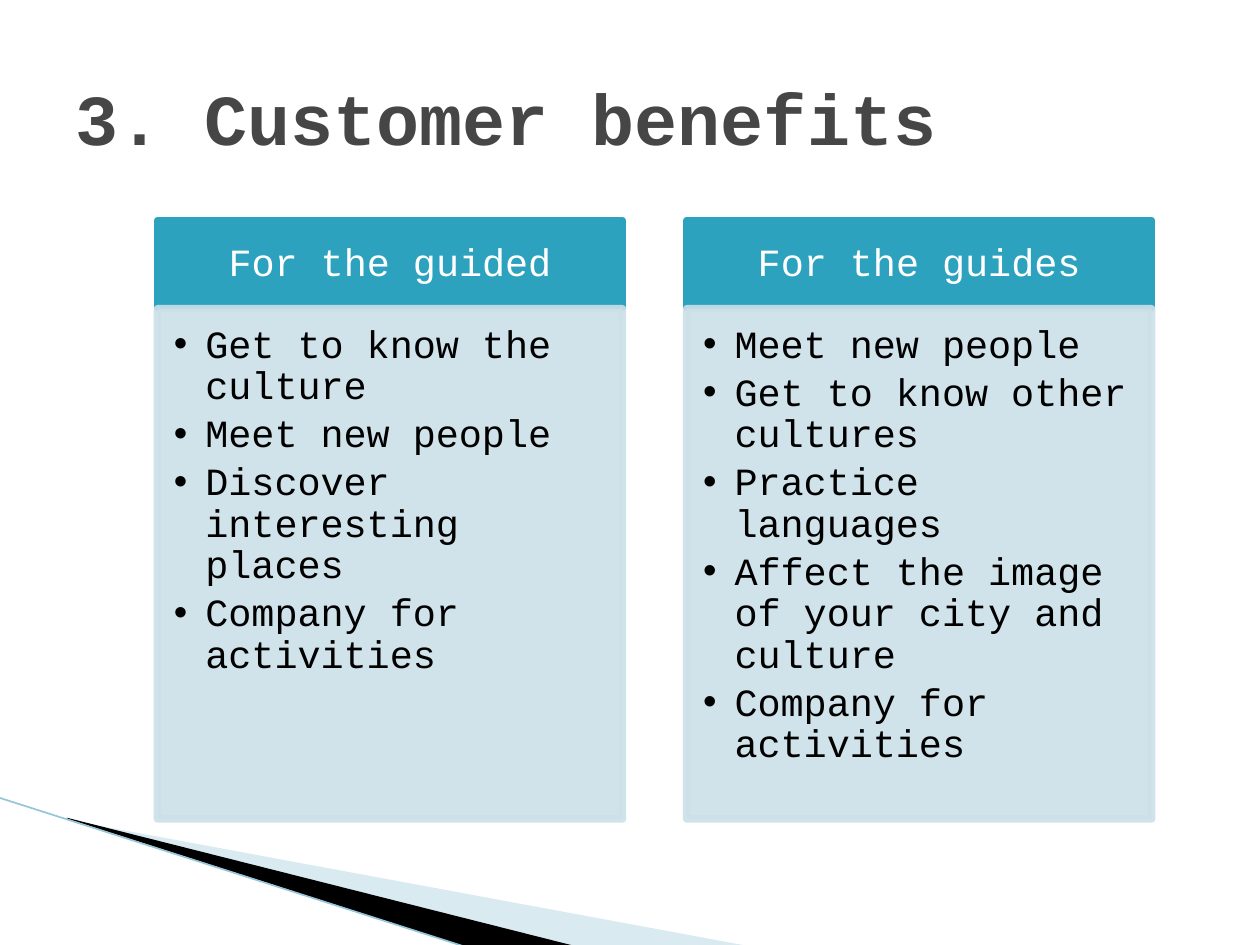
import pptx
import pptx.util
import pptx.dml.color
import pptx.enum.shapes
import pptx.enum.text
import pptx.oxml.ns
from lxml import etree

Inches = pptx.util.Inches
Pt = pptx.util.Pt
qn = pptx.oxml.ns.qn
ALIGN = pptx.enum.text.PP_ALIGN
ANCHOR = pptx.enum.text.MSO_ANCHOR

COLORS = {
    "title": "464646",
    "header": "2DA2BF",
    "panel": "CDE0E8",
    "wedge": "A0CBDC",
    "edge": "97C5D8",
    "black": "000000",
    "white": "FFFFFF",
}


def paint(shape, color, opacity=100, line_width=None):
    rgb = pptx.dml.color.RGBColor.from_string(COLORS[color])
    shape.shadow.inherit = False
    shape.fill.solid()
    shape.fill.fore_color.rgb = rgb
    if line_width is None:
        shape.line.fill.background()
    else:
        shape.line.color.rgb = rgb
        shape.line.width = Pt(line_width)
    if opacity < 100:
        for tone in shape._element.spPr.iter(qn("a:srgbClr")):
            etree.SubElement(tone, qn("a:alpha"), val=str(opacity * 1000))


def write(shape, lines, size, color, frame_format, para_format, bold=False, bullet=False):
    frame = shape.text_frame
    for name, value in frame_format.items():
        setattr(frame, name, value)
    for index, line in enumerate(lines):
        para = frame.add_paragraph() if index else frame.paragraphs[0]
        if bullet:
            props = para._p.get_or_add_pPr()
            props.set("marL", str(Inches(0.25)))
            props.set("indent", str(Inches(-0.25)))
            etree.SubElement(props, qn("a:buFont"), typeface="Arial")
            etree.SubElement(props, qn("a:buChar"), char="•")
        for name, value in para_format.items():
            setattr(para, name, value)
        span = para.add_run()
        span.text = line
        font_format = {"name": "Courier New", "size": Pt(size), "bold": bold}
        for name, value in font_format.items():
            setattr(span.font, name, value)
        span.font.color.rgb = pptx.dml.color.RGBColor.from_string(COLORS[color])


deck = pptx.Presentation()
deck.slide_width = Inches(10)
deck.slide_height = Inches(7.5)
page = deck.slides.add_slide(deck.slide_layouts[6])

wedges = [
    ("wedge", 40, [(0.55, 6.51), (5.95, 7.51), (4.56, 7.51), (0.55, 6.5)]),
    ("black", 100, [(0.53, 6.49), (4.57, 7.51), (3.72, 7.52), (0.54, 6.5)]),
]
for color, opacity, points in wedges:
    corners = [(Inches(x), Inches(y)) for x, y in points]
    builder = page.shapes.build_freeform(*corners[0])
    builder.add_line_segments(corners[1:], close=True)
    paint(builder.convert_to_shape(), color, opacity)

edge = page.shapes.add_connector(
    pptx.enum.shapes.MSO_CONNECTOR.STRAIGHT,
    Inches(-0.01), Inches(6.33), Inches(3.71), Inches(7.52),
)
edge.line.color.rgb = pptx.dml.color.RGBColor.from_string(COLORS["edge"])
edge.line.width = Pt(0.95)
etree.SubElement(edge._element.spPr, qn("a:effectLst"))

title = page.shapes.add_textbox(Inches(0.5), Inches(0.3), Inches(9), Inches(1.25))
write(title, ["3. Customer benefits"], 41, "title",
      {"word_wrap": True, "vertical_anchor": ANCHOR.MIDDLE}, {}, bold=True)

header_frame = {
    "word_wrap": True, "vertical_anchor": ANCHOR.MIDDLE,
    "margin_left": Inches(0.17), "margin_right": Inches(0.17),
    "margin_top": Inches(0.1), "margin_bottom": Inches(0.1),
}
panel_frame = {
    "word_wrap": True, "vertical_anchor": ANCHOR.TOP,
    "margin_left": Inches(0.13), "margin_right": Inches(0.17),
    "margin_top": Inches(0.13), "margin_bottom": Inches(0.19),
}
header_para = {"alignment": ALIGN.CENTER, "line_spacing": 0.9}
panel_para = {"alignment": ALIGN.LEFT, "line_spacing": 0.9,
              "space_after": Pt(3.6), "level": 1}

groups = {
    "For the guided": [
        "Get to know the culture",
        "Meet new people",
        "Discover interesting places",
        "Company for activities",
    ],
    "For the guides": [
        "Meet new people",
        "Get to know other cultures",
        "Practice languages",
        "Affect the image of your city and culture",
        "Company for activities",
    ],
}
rectangle = pptx.enum.shapes.MSO_SHAPE.RECTANGLE
for column, (heading, benefits) in enumerate(groups.items()):
    left = Inches(1.25 + 4.2 * column)
    header = page.shapes.add_shape(rectangle, left, Inches(1.75), Inches(3.69), Inches(0.69))
    paint(header, "header", line_width=4.33)
    write(header, [heading], 22, "white", header_frame, header_para)
    panel = page.shapes.add_shape(rectangle, left, Inches(2.45), Inches(3.69), Inches(4.05))
    paint(panel, "panel", 90, 4.33)
    write(panel, benefits, 22, "black", panel_frame, panel_para, bullet=True)

deck.save("out.pptx")
